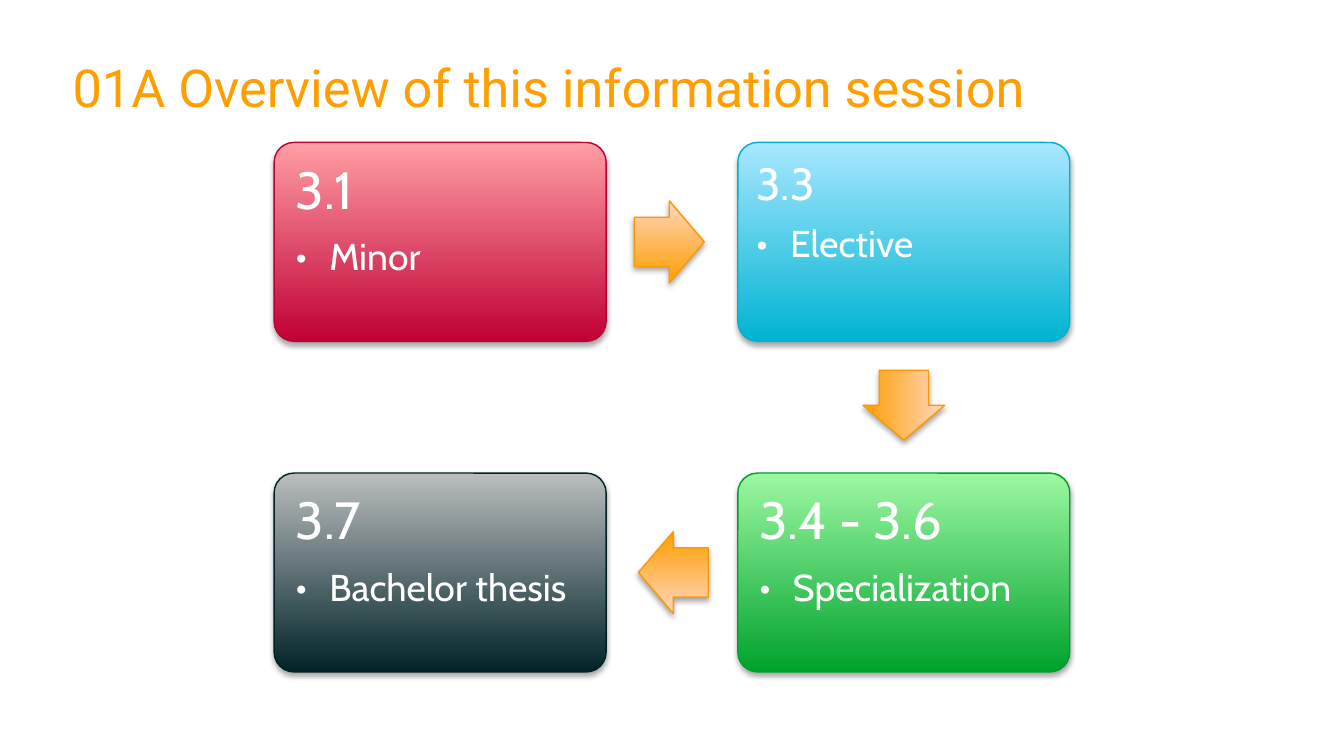
from lxml import etree
from pptx import Presentation
from pptx import util as u
from pptx.dml import color
from pptx.enum import shapes, text
from pptx.oxml import ns

SLIDE_WIDTH = 10
CARD_WIDTH, CARD_HEIGHT = 2.47, 1.48
COLUMNS = (2.04, 5.49)
ROWS = (1.06, 3.52)
ARROW_WIDTH, ARROW_HEIGHT = 0.52, 0.61


def rgb(value):
    return color.RGBColor.from_string(value)


def add_xml(parent, tag, **attributes):
    return etree.SubElement(parent, ns.qn(tag), attributes)


class SessionSlide:
    heading_font = "Roboto"
    body_font = "Cabin"
    accent = "FF9E00"
    white = "FFFFFF"

    def __init__(self, deck):
        self.slide = deck.slides.add_slide(deck.slide_layouts[5])

    def format_runs(self, paragraph, font, size, hue):
        for run in paragraph.runs:
            run.font.name = font
            run.font.size = u.Pt(size)
            run.font.color.rgb = rgb(hue)

    def prepare_frame(self, frame, inset):
        frame.word_wrap = True
        frame.auto_size = text.MSO_AUTO_SIZE.NONE
        frame.vertical_anchor = text.MSO_ANCHOR.TOP
        frame.margin_left = frame.margin_right = u.Inches(inset)
        frame.margin_top = frame.margin_bottom = u.Inches(inset)

    def title(self, wording):
        heading = self.slide.shapes.title
        heading.left, heading.top = u.Inches(0.54), u.Inches(0.43)
        heading.width, heading.height = u.Inches(8.94), u.Inches(0.63)
        self.prepare_frame(heading.text_frame, 0)
        heading.text_frame.text = wording
        paragraph = heading.text_frame.paragraphs[0]
        paragraph.alignment = text.PP_ALIGN.LEFT
        paragraph.line_spacing = u.Pt(32)
        self.format_runs(paragraph, self.heading_font, 28, self.accent)

    def glossy(self, kind, box, adjustments, bottom, top, outline):
        shape = self.slide.shapes.add_shape(kind, *map(u.Inches, box))
        for index, value in enumerate(adjustments):
            shape.adjustments[index] = value
        shape.fill.gradient()
        shape.fill.gradient_angle = 90
        for stop, hue in zip(shape.fill.gradient_stops, (bottom, top)):
            stop.color.rgb = rgb(hue)
        shape.line.color.rgb = rgb(outline)
        shape.line.width = u.Pt(0.75)
        shape.shadow.inherit = False
        effects = shape.element.spPr.find(ns.qn("a:effectLst"))
        shadow = add_xml(effects, "a:outerShdw", blurRad=str(u.Pt(3.1)), dist=str(u.Pt(1.8)),
                         dir="5400000", rotWithShape="0")
        add_xml(add_xml(shadow, "a:srgbClr", val="000000"), "a:alpha", val="35000")
        return shape

    def card(self, left, top, number, topic, colours, size=28, inset=0.12):
        self.glossy(shapes.MSO_SHAPE.ROUNDED_RECTANGLE,
                    (left, top, CARD_WIDTH, CARD_HEIGHT), [0.1], *colours)
        label = self.slide.shapes.add_textbox(
            u.Inches(left + 0.04), u.Inches(top + 0.04),
            u.Inches(CARD_WIDTH - 0.09), u.Inches(CARD_HEIGHT - 0.09))
        frame = label.text_frame
        self.prepare_frame(frame, inset)
        frame.text = f"{number}\n{topic}"
        number_line, topic_line = frame.paragraphs
        for paragraph, points, gap in ((number_line, size, 0.35), (topic_line, 20, 0.15)):
            paragraph.line_spacing = 0.9
            paragraph.space_after = u.Pt(points * gap)
            self.format_runs(paragraph, self.body_font, points, self.white)
        topic_line.level = 1
        properties = topic_line._p.get_or_add_pPr()
        properties.set("marL", str(u.Inches(0.25)))
        properties.set("indent", str(u.Inches(-0.25)))
        add_xml(properties, "a:buFont", typeface=self.body_font)
        add_xml(properties, "a:buChar", char="•")

    def arrow(self, left, top, rotation=0):
        arrow = self.glossy(shapes.MSO_SHAPE.RIGHT_ARROW,
                            (left, top, ARROW_WIDTH, ARROW_HEIGHT), [0.6, 0.5],
                            self.accent, "FFD6BD", "F99B00")
        arrow.rotation = rotation


def main():
    deck = Presentation()
    deck.slide_width = u.Inches(SLIDE_WIDTH)
    deck.slide_height = u.Inches(SLIDE_WIDTH * 9 / 16)
    overview = SessionSlide(deck)
    overview.title("01A Overview of this information session")

    left, right = COLUMNS
    upper, lower = ROWS
    arrow_drop = (CARD_HEIGHT - ARROW_HEIGHT) / 2
    overview.card(left, upper, "3.1", "Minor", ("C00034", "FF9EA5", "BC0033"))
    overview.arrow(4.72, upper + arrow_drop)
    overview.card(right, upper, "3.3", "Elective", ("00B4D2", "A8E7FF", "00B0CD"),
                  size=24, inset=0.1)
    overview.arrow(right + (CARD_WIDTH - ARROW_WIDTH) / 2, 2.71, 90)
    overview.card(right, lower, "3.4 - 3.6", "Specialization", ("00A22E", "9CF8A1", "009E2D"))
    overview.arrow(4.75, lower + arrow_drop, 180)
    overview.card(left, lower, "3.7", "Bachelor thesis", ("002328", "BBBEBF", "002227"))
    deck.save("out.pptx")


if __name__ == "__main__":
    main()
